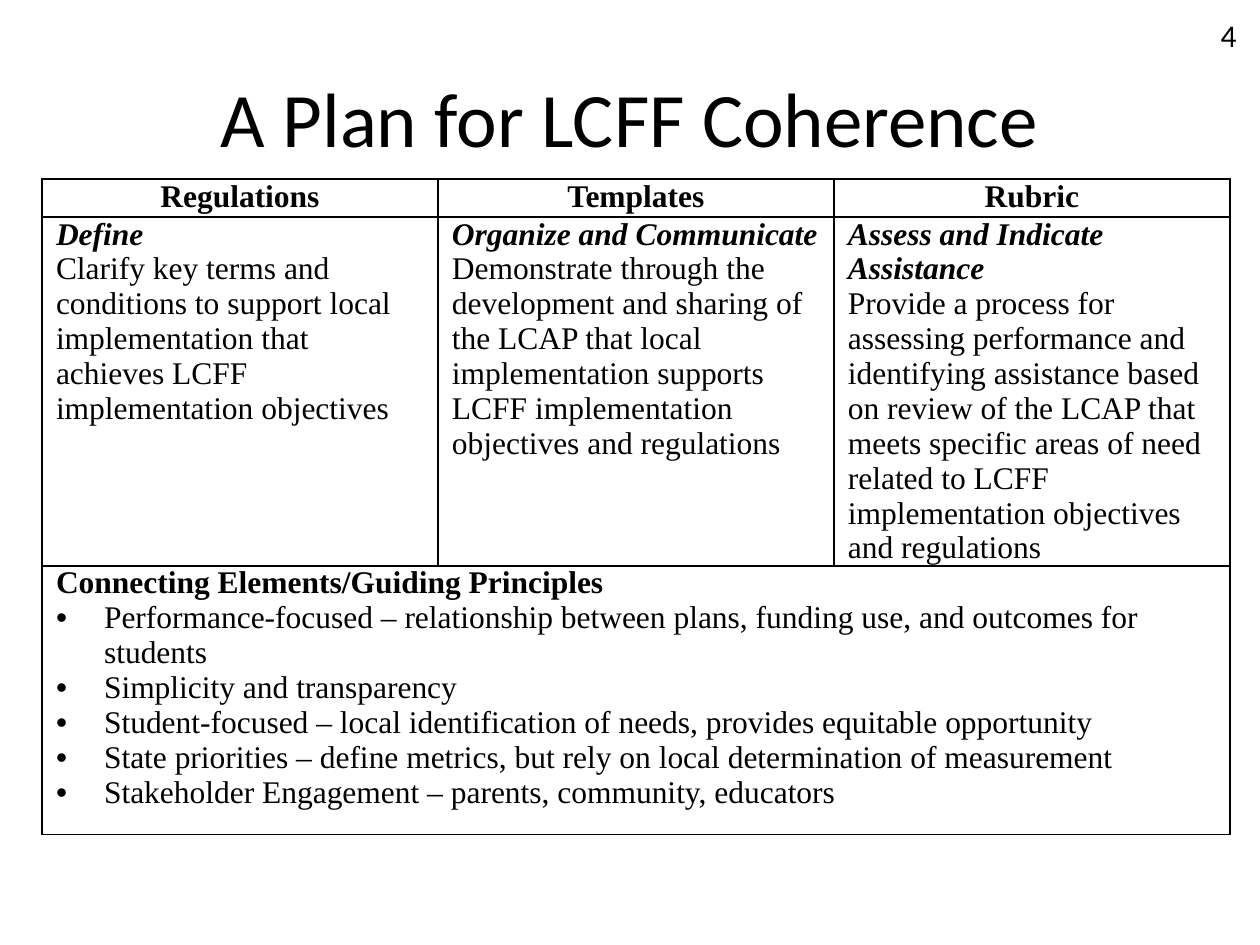
from dataclasses import dataclass

import pptx
import pptx.dml.color
import pptx.enum.text
import pptx.oxml.ns
import pptx.util
from lxml import etree

ALIGN = pptx.enum.text.PP_ALIGN
ANCHOR = pptx.enum.text.MSO_ANCHOR


@dataclass(frozen=True)
class Theme:
    ink: str = "000000"
    paper: str = "FFFFFF"
    heading_font: str = "Calibri"
    table_font: str = "Times New Roman"
    title_size: int = 44
    text_size: int = 18
    border_width: int = 1


@dataclass(frozen=True)
class Pillar:
    name: str
    purpose: str
    detail: str


THEME = Theme()
PX_PER_INCH = 126
COLUMN_WIDTH = 396
ROW_HEIGHTS = (38, 348, 269)
CELL_INSET = 14
BULLET_INDENT = 48

PILLARS = (
    Pillar(
        "Regulations",
        "Define",
        "Clarify key terms and conditions to support local implementation that "
        "achieves LCFF implementation objectives",
    ),
    Pillar(
        "Templates",
        "Organize and Communicate",
        "Demonstrate through the development and sharing of the LCAP that local "
        "implementation supports LCFF implementation objectives and regulations",
    ),
    Pillar(
        "Rubric",
        "Assess and Indicate Assistance",
        "Provide a process for assessing performance and identifying assistance "
        "based on review of the LCAP that meets specific areas of need related to "
        "LCFF implementation objectives and regulations",
    ),
)
PRINCIPLES = (
    "Performance-focused – relationship between plans, funding use, and outcomes for students",
    "Simplicity and transparency",
    "Student-focused – local identification of needs, provides equitable opportunity",
    "State priorities – define metrics, but rely on local determination of measurement",
    "Stakeholder Engagement – parents, community, educators",
)


def px(length: int) -> pptx.util.Emu:
    return pptx.util.Emu(round(length * 914400 / PX_PER_INCH))


def place(shape, left: int, top: int, width: int, height: int) -> None:
    shape.left, shape.top = px(left), px(top)
    shape.width, shape.height = px(width), px(height)


def add_span(para, text: str, font: str, size: int, bold=False, italic=False) -> None:
    span = para.add_run()
    span.text = text
    span.font.name = font
    span.font.size = pptx.util.Pt(size)
    span.font.bold = bold
    span.font.italic = italic
    span.font.color.rgb = pptx.dml.color.RGBColor.from_string(THEME.ink)


def add_child(parent, tag: str, **attributes: str):
    return etree.SubElement(parent, pptx.oxml.ns.qn(tag), attributes)


def style_cell(cell) -> None:
    """Give the cell its insets, thin border on every side and plain fill."""
    cell.margin_left = cell.margin_right = px(CELL_INSET)
    cell.margin_top = cell.margin_bottom = 0
    properties = cell._tc.get_or_add_tcPr()
    for side in ("a:lnL", "a:lnR", "a:lnT", "a:lnB"):
        line = add_child(properties, side, w=str(pptx.util.Pt(THEME.border_width)))
        add_child(add_child(line, "a:solidFill"), "a:srgbClr", val=THEME.ink)
    cell.fill.solid()
    cell.fill.fore_color.rgb = pptx.dml.color.RGBColor.from_string(THEME.paper)


def add_bullet(para) -> None:
    properties = para._p.get_or_add_pPr()
    properties.set("marL", str(px(BULLET_INDENT)))
    properties.set("indent", str(-px(BULLET_INDENT)))
    add_child(properties, "a:buFont", typeface="Arial")
    add_child(properties, "a:buChar", char="•")


def add_title(page) -> None:
    title = page.shapes.title
    place(title, 63, 38, 1134, 158)
    title.text_frame.vertical_anchor = ANCHOR.MIDDLE
    para = title.text_frame.paragraphs[0]
    para.alignment = ALIGN.CENTER
    add_span(para, "A Plan for LCFF Coherence", THEME.heading_font, THEME.title_size)


def add_coherence_table(page) -> None:
    frame = page.shapes.add_table(
        len(ROW_HEIGHTS), len(PILLARS), px(42), px(179),
        px(COLUMN_WIDTH * len(PILLARS)), px(sum(ROW_HEIGHTS)),
    )
    table = frame.table
    table.first_row = table.horz_banding = False
    for column in table.columns:
        column.width = px(COLUMN_WIDTH)
    for row, height in zip(table.rows, ROW_HEIGHTS):
        row.height = px(height)
    for cell in table.iter_cells():
        style_cell(cell)

    font, size = THEME.table_font, THEME.text_size
    for index, pillar in enumerate(PILLARS):
        para = table.cell(0, index).text_frame.paragraphs[0]
        para.alignment = ALIGN.CENTER
        add_span(para, pillar.name, font, size, bold=True)
        body = table.cell(1, index).text_frame
        add_span(body.paragraphs[0], pillar.purpose, font, size, bold=True, italic=True)
        add_span(body.add_paragraph(), pillar.detail, font, size)

    principles = table.cell(2, 0)
    principles.merge(table.cell(2, len(PILLARS) - 1))
    body = principles.text_frame
    add_span(body.paragraphs[0], "Connecting Elements/Guiding Principles", font, size, bold=True)
    for principle in PRINCIPLES:
        para = body.add_paragraph()
        add_bullet(para)
        add_span(para, principle, font, size)


def add_page_number(page) -> None:
    box = page.shapes.add_textbox(px(1176), px(10), px(73), px(50))
    box.text_frame.word_wrap = True
    para = box.text_frame.paragraphs[0]
    para.alignment = ALIGN.RIGHT
    add_span(para, "4", THEME.heading_font, THEME.text_size)


def main() -> None:
    deck = pptx.Presentation()
    deck.slide_width, deck.slide_height = px(1260), px(945)
    page = deck.slides.add_slide(deck.slide_layouts.get_by_name("Title Only"))
    add_title(page)
    add_coherence_table(page)
    add_page_number(page)
    deck.save("out.pptx")


if __name__ == "__main__":
    main()
